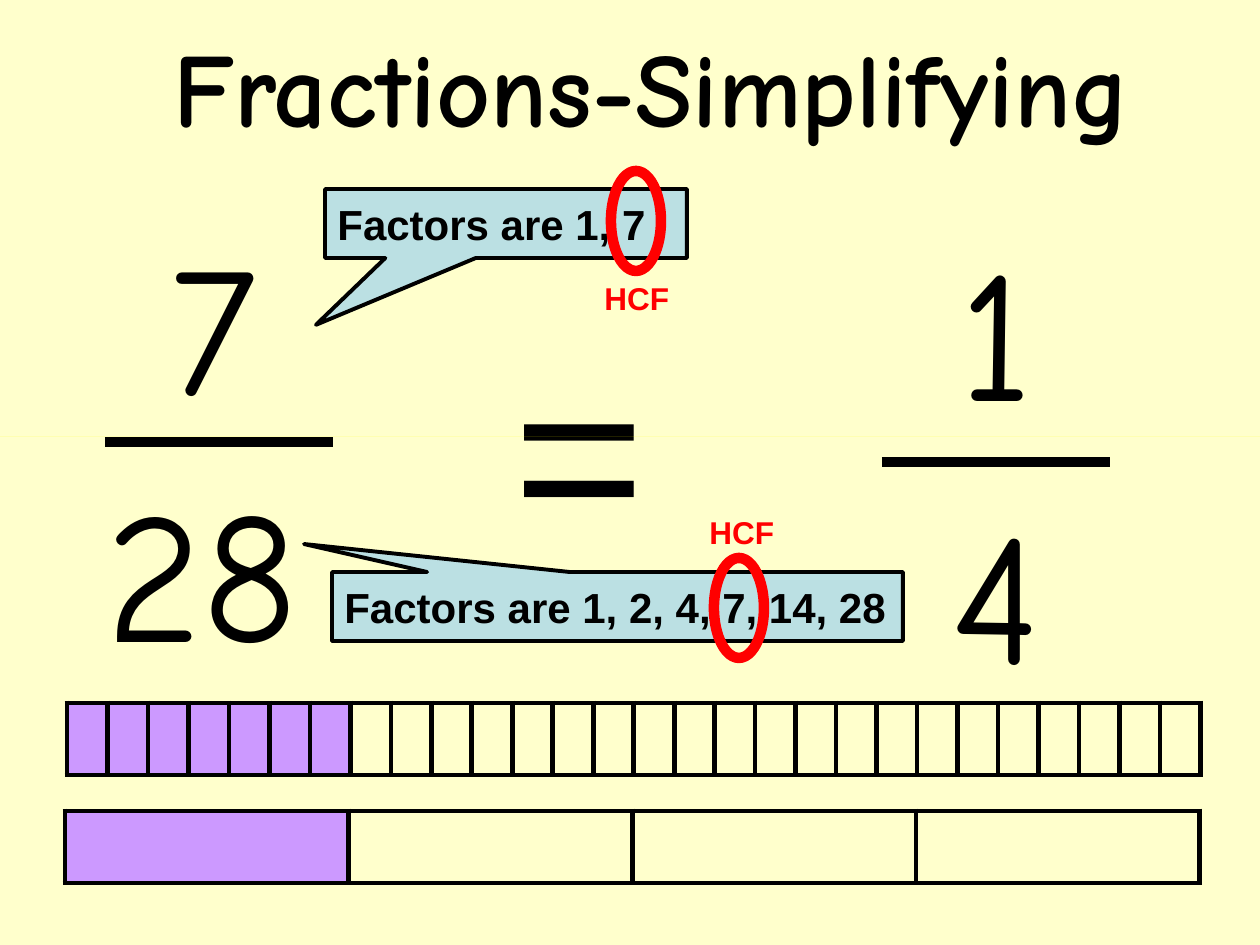
from lxml import etree
from pptx import Presentation
from pptx import util as u
from pptx.dml.color import RGBColor
from pptx.enum import shapes, text
from pptx.oxml.ns import qn

PX = 914400 // 126
COLORS = {"paper": "FFFFCC", "ink": "000000", "rule": "FFFF00",
          "callout": "BBE0E3", "factor": "FF0000", "shaded": "CC99FF"}
HAND, PLAIN = "Comic Neue", "Arial"

TITLE = ("Fractions-Simplifying", (84, 45, 1134, 158))
NUMBERS = [("7", (84, 204, 258, 236)), ("28", (73, 451, 258, 236)),
           ("1", (892, 210, 208, 236)), ("4", (892, 473, 208, 236))]
EQUALS = ("=", (501, 304, 149, 284))
FRACTION_LINES = [(105, 442), (882, 462)]
FRACTION_LINE_WIDTH = 228
RULE = (0, 437, 1260, 0)
CALLOUTS = [("Factors are 1, 7", (325, 189, 362, 69), (-0.525, 1.469)),
            ("Factors are 1, 2, 4, 7, 14, 28", (332, 572, 571, 69), (-0.549, -0.906))]
RINGS = [(714, 558, 50, 100), (611, 171, 50, 100)]
HCF_LABELS = [("HCF", (592, 273, 110, 50)), ("HCF", (697, 507, 110, 50))]
# parts, shaded parts, box
BARS = [(28, 7, (67, 703, 1134, 72)), (4, 1, (65, 811, 1135, 72))]


def color(name):
    return RGBColor.from_string(COLORS[name])


def emu(box):
    return [length * PX for length in box]


def write(shape, words, size, font, ink="ink", bold=False,
          align=text.PP_ALIGN.LEFT, anchor=text.MSO_ANCHOR.TOP):
    frame = shape.text_frame
    frame.word_wrap = True
    frame.vertical_anchor = anchor
    paragraph = frame.paragraphs[0]
    paragraph.text = words
    paragraph.alignment = align
    paragraph.font.size = u.Pt(size)
    paragraph.font.name = font
    paragraph.font.bold = bold
    paragraph.font.color.rgb = color(ink)


def add_text(slide, words, box, *style, **options):
    shape = slide.shapes.add_textbox(*emu(box))
    write(shape, words, *style, **options)
    return shape


def add_shape(slide, kind, box, fill=None, line=None, width=0):
    shape = slide.shapes.add_shape(kind, *emu(box))
    shape.shadow.inherit = False
    if fill:
        shape.fill.solid()
        shape.fill.fore_color.rgb = color(fill)
    else:
        shape.fill.background()
    if line:
        shape.line.color.rgb = color(line)
        shape.line.width = u.Pt(width)
    else:
        shape.line.fill.background()
    return shape


def add_fraction_line(slide, left, top):
    line = slide.shapes.add_connector(
        shapes.MSO_CONNECTOR.STRAIGHT,
        *emu((left, top, left + FRACTION_LINE_WIDTH, top)))
    line.line.color.rgb = color("ink")
    line.line.width = u.Pt(6)
    etree.SubElement(line._element.spPr, qn("a:effectLst"))


def add_borders(cell, points):
    """Put the four borders ahead of the cell's fill, as the schema asks."""
    properties = cell._tc.get_or_add_tcPr()
    for index, side in enumerate(("lnL", "lnR", "lnT", "lnB")):
        border = etree.Element(qn("a:" + side), w=str(u.Pt(points)))
        fill = etree.SubElement(border, qn("a:solidFill"))
        etree.SubElement(fill, qn("a:srgbClr"), val=COLORS["ink"])
        properties.insert(index, border)


def add_bar(slide, parts, shaded, box):
    table = slide.shapes.add_table(1, parts, *emu(box)).table
    table.first_row = table.horz_banding = False
    for index, column in enumerate(table.columns):
        column.width = box[2] * PX // parts
        cell = table.cell(0, index)
        if index < shaded:
            cell.fill.solid()
            cell.fill.fore_color.rgb = color("shaded")
        else:
            cell.fill.background()
        add_borders(cell, 3)


def main():
    presentation = Presentation()
    presentation.slide_width, presentation.slide_height = u.Inches(10), u.Inches(7.5)
    slide = presentation.slides.add_slide(presentation.slide_layouts[6])
    slide.background.fill.solid()
    slide.background.fill.fore_color.rgb = color("paper")

    center, middle = text.PP_ALIGN.CENTER, text.MSO_ANCHOR.MIDDLE
    title = add_text(slide, *TITLE, 60, HAND, bold=True, align=center, anchor=middle)
    title.text_frame.margin_bottom = 84 * PX  # lifts the title in its box

    for left, top in FRACTION_LINES:
        add_fraction_line(slide, left, top)
    for words, box in NUMBERS:
        add_text(slide, words, box, 106, HAND, align=center)
    add_text(slide, *EQUALS, 129, PLAIN)
    add_shape(slide, shapes.MSO_SHAPE.RECTANGLE, RULE, fill="rule")

    for words, box, tip in CALLOUTS:
        callout = add_shape(slide, shapes.MSO_SHAPE.RECTANGULAR_CALLOUT, box,
                            "callout", "ink", 2.25)
        callout.adjustments[0], callout.adjustments[1] = tip
        write(callout, words, 24, PLAIN, bold=True, anchor=middle)
    for box in RINGS:
        add_shape(slide, shapes.MSO_SHAPE.OVAL, box, line="factor", width=6)
    for words, box in HCF_LABELS:
        add_text(slide, words, box, 18, PLAIN, "factor", bold=True)
    for parts, shaded, box in BARS:
        add_bar(slide, parts, shaded, box)

    presentation.save("out.pptx")


if __name__ == "__main__":
    main()
